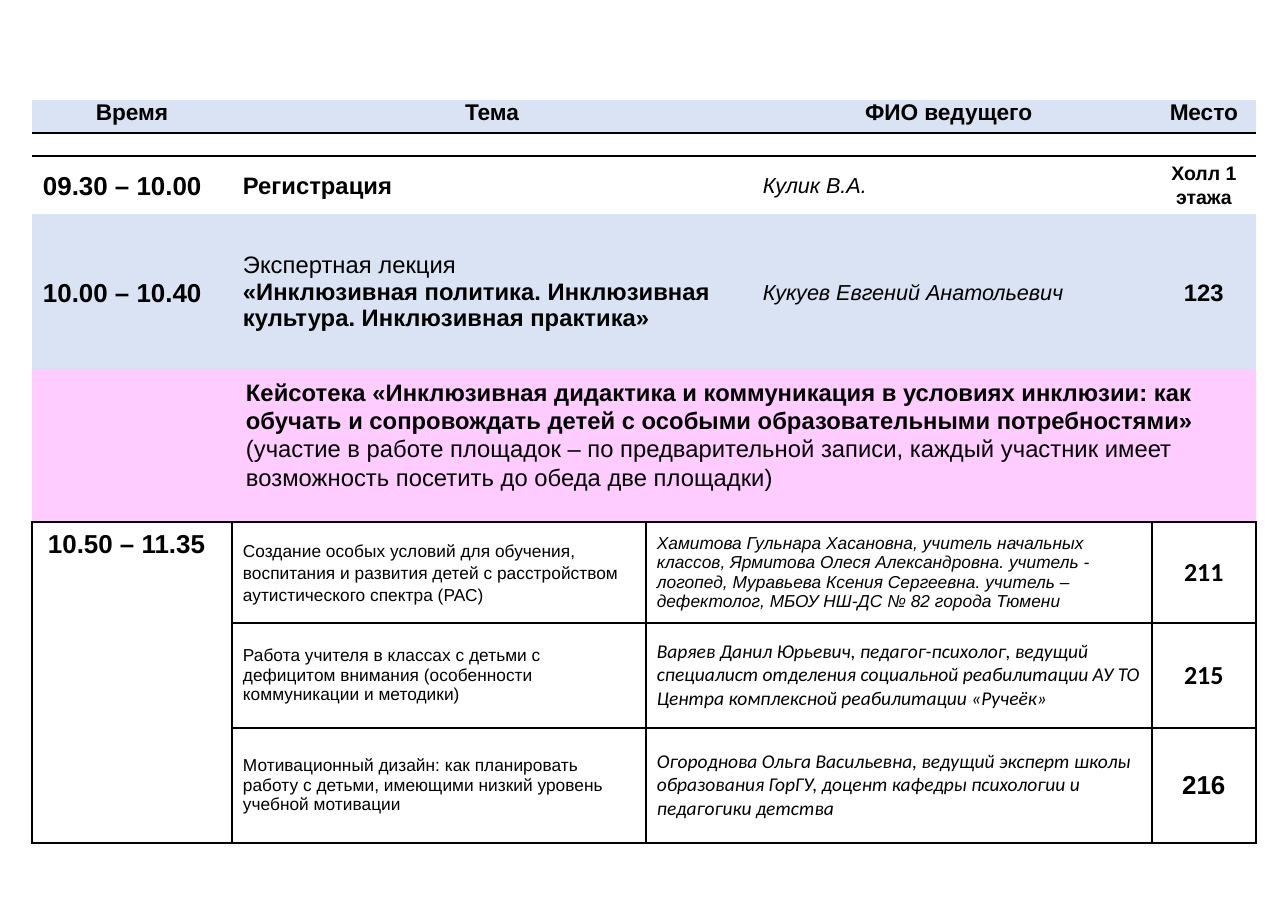
import pptx
import pptx.dml.color
import pptx.enum.text
import pptx.oxml
import pptx.oxml.ns
import pptx.util

UNIT = 5873
COLORS = {"ink": "000000", "blue": "DAE3F3", "pink": "FFCCFF"}
WIDTHS = [200, 414, 106, 400, 104]
HEIGHTS = [33, 23, 58, 156, 152, 101, 105, 115]
BOX = (32, 100, sum(WIDTHS), sum(HEIGHTS))
MID = pptx.enum.text.MSO_ANCHOR.MIDDLE

TALKS = [
    (None, "09.30 – 10.00", [("Регистрация", True)], "Кулик В.А.", "Холл 1 этажа", 9),
    ("blue", "10.00 – 10.40",
     [("Экспертная лекция", False),
      ("«Инклюзивная политика. Инклюзивная культура. Инклюзивная практика»", True)],
     "Кукуев Евгений Анатольевич", "123", 11),
]
SLOTS = [
    ("Создание особых условий для обучения, воспитания и развития детей "
     "с\u00a0расстройством аутистического спектра (РАС)",
     "Хамитова Гульнара Хасановна, учитель начальных классов, Ярмитова Олеся "
     "Александровна. учитель - логопед, Муравьева Ксения Сергеевна. учитель – "
     "дефектолог, МБОУ НШ-ДС № 82 города Тюмени",
     "211", 8, "Arial", "Calibri", pptx.util.Pt(10)),
    ("Работа учителя в классах с детьми с дефицитом внимания (особенности "
     "коммуникации и методики)",
     "Варяев Данил Юрьевич, педагог-психолог, ведущий специалист отделения "
     "социальной реабилитации АУ ТО Центра комплексной реабилитации «Ручеёк»",
     "215", 9, "Calibri", "Calibri", None),
    ("Мотивационный дизайн: как планировать работу с детьми, имеющими низкий "
     "уровень учебной мотивации",
     "Огороднова Ольга Васильевна, ведущий эксперт школы образования ГорГУ, "
     "доцент кафедры психологии и педагогики детства",
     "216", 9, "Calibri", "Arial", None),
]


def px(count):
    """Turn px into EMU."""
    return pptx.util.Emu(count * UNIT)


def rgb(name):
    """Return a named colour."""
    return pptx.dml.color.RGBColor.from_string(COLORS[name])


def dress(cell, fill=None, sides=""):
    """Set the borders, fill and margins of a cell."""
    props = cell._tc.get_or_add_tcPr()
    for side in "LRTB":
        line = pptx.oxml.parse_xml(
            f'<a:ln{side} {pptx.oxml.ns.nsdecls("a")} w="12700">'
            + (f'<a:solidFill><a:srgbClr val="{COLORS["ink"]}"/></a:solidFill>'
               if side in sides else "<a:noFill/>")
            + f"</a:ln{side}>")
        props.append(line)
    if fill:
        cell.fill.solid()
        cell.fill.fore_color.rgb = rgb(fill)
    else:
        cell.fill.background()
    cell.margin_left = cell.margin_right = px(11)
    cell.margin_top = cell.margin_bottom = 0


def style(para, size, look="", face="Arial", center=False, lead=None, after=0):
    """Set the font and spacing of a paragraph."""
    font = para.font
    font.name, font.size = face, pptx.util.Pt(size)
    font.bold, font.italic = "b" in look, "i" in look
    font.color.rgb = rgb("ink")
    if center:
        para.alignment = pptx.enum.text.PP_ALIGN.CENTER
    if lead:
        para.line_spacing = lead
    para.space_after = pptx.util.Pt(after)


def write(cell, text, size, look="", anchor=MID, **more):
    """Put one styled paragraph in a cell."""
    cell.vertical_anchor = anchor
    para = cell.text_frame.paragraphs[0]
    para.add_run().text = text
    style(para, size, look, **more)


def band(table, row, fill=None, sides=""):
    """Dress every cell of a row and return them."""
    cells = list(table.rows[row].cells)
    for cell in cells:
        dress(cell, fill, sides)
    return cells


def head(table, row):
    """Fill the heading row and the thin row under it."""
    cells = band(table, row, "blue", "B")
    cells[1].merge(cells[2])
    for col, text in ((0, "Время"), (1, "Тема"), (3, "ФИО ведущего "), (4, "Место")):
        write(cells[col], text, 10.5, "b", None, center=True)
    thin = band(table, row + 1, sides="TB")
    thin[1].merge(thin[2])
    for cell in thin:
        para = cell.text_frame.paragraphs[0]
        para._p.get_or_add_endParaRPr().set("sz", "600")


def talk(table, row, fill, time, parts, host, place, size):
    """Fill a row for one talk."""
    cells = band(table, row, fill, "" if fill else "T")
    cells[1].merge(cells[2])
    loose = {"lead": 1.07, "after": 8}
    write(cells[0], time, 12, "b", **loose)
    cells[1].vertical_anchor = MID
    frame = cells[1].text_frame
    for spot, (text, bold) in enumerate(parts):
        para = frame.add_paragraph() if spot else frame.paragraphs[0]
        para.add_run().text = text
        style(para, 11, "b" if bold else "", **({} if fill else loose))
    write(cells[3], host, 10, "i", **loose)
    write(cells[4], place, size, "b", center=True, **loose)


def topic(table, row):
    """Fill the pink row with the theme of the sessions."""
    cells = band(table, row, "pink", "B")
    cells[0].merge(cells[-1])
    cell = cells[0]
    cell.margin_left = cell.margin_right = px(16)
    cell.margin_top = cell.margin_bottom = px(8)
    para = cell.text_frame.paragraphs[0]
    style(para, 11, lead=1.07, after=8)
    para._p.get_or_add_pPr().set("marL", str(px(198)))
    para._p.get_or_add_pPr().set("indent", "0")
    title = para.add_run()
    title.text = ("Кейсотека «Инклюзивная дидактика и коммуникация в условиях инклюзии: "
                  "как обучать и сопровождать детей с особыми образовательными потребностями» ")
    title.font.bold = True
    para.add_line_break()
    para.add_run().text = ("(участие в работе площадок – по предварительной записи, каждый "
                           "участник имеет возможность посетить до обеда две площадки)")


def slots(table, row):
    """Fill the grid of parallel sessions."""
    for step, (theme, host, room, size, face, digit, lead) in enumerate(SLOTS):
        cells = band(table, row + step, sides="LRTB")
        cells[2].merge(cells[3])
        write(cells[1], theme, 8, lead=lead)
        write(cells[2], host, size, "i", face=face)
        write(cells[4], room, 12, "b", face=digit, center=True)
    time = table.cell(row, 0)
    time.merge(table.cell(row + len(SLOTS) - 1, 0))
    time.margin_left = time.margin_right = px(16)
    time.margin_top = time.margin_bottom = px(8)
    write(time, "10.50 – 11.35", 12, "b", None)


def plan(slide, box):
    """Draw the timetable in its box."""
    table = slide.shapes.add_table(len(HEIGHTS), len(WIDTHS), *map(px, box)).table
    table.first_row = table.horz_banding = False
    for col, width in zip(table.columns, WIDTHS):
        col.width = px(width)
    for row, height in zip(table.rows, HEIGHTS):
        row.height = px(height)
    head(table, 0)
    for row, entry in enumerate(TALKS, 2):
        talk(table, row, *entry)
    topic(table, 4)
    slots(table, 5)


def main():
    """Build and save the deck."""
    deck = pptx.Presentation()
    deck.slide_width, deck.slide_height = px(1288), px(908)
    plan(deck.slides.add_slide(deck.slide_layouts[6]), BOX)
    deck.save("out.pptx")


if __name__ == "__main__":
    main()
